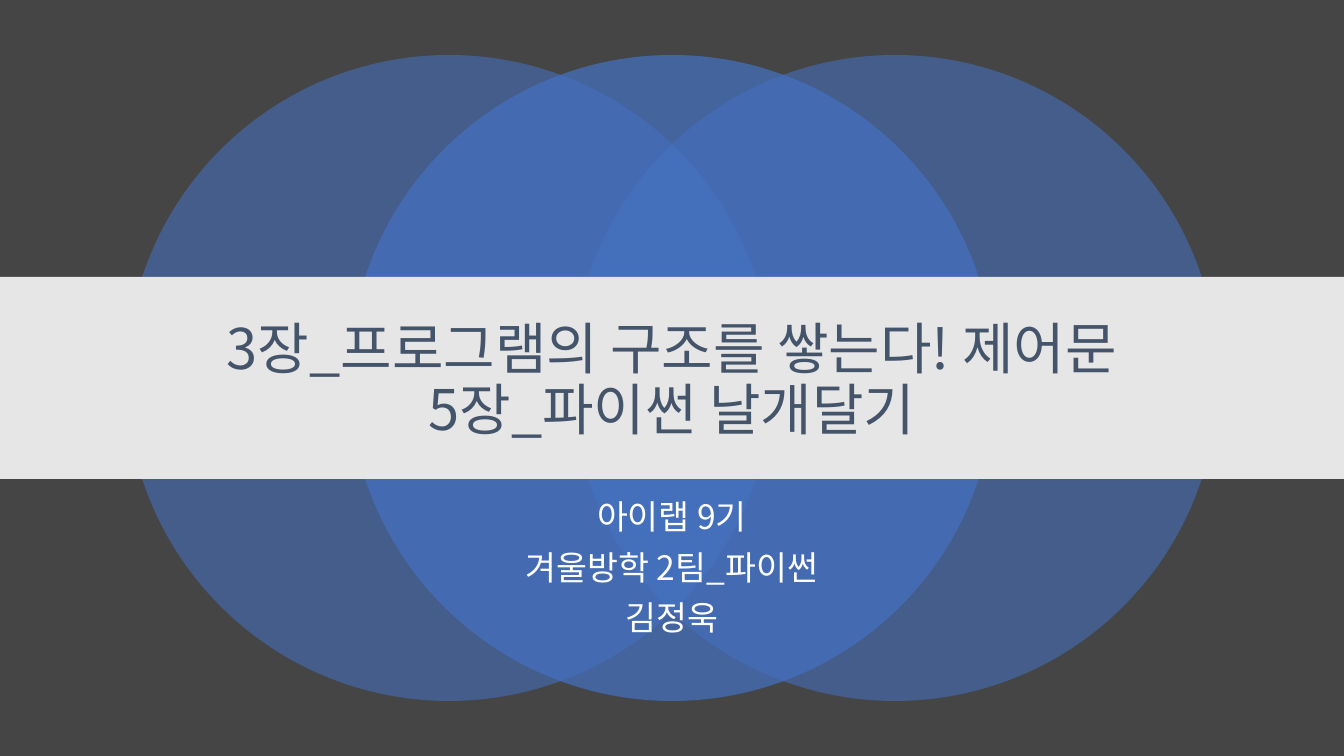
from lxml import etree
from pptx import Presentation
from pptx.dml.color import RGBColor
from pptx.enum.shapes import MSO_SHAPE
from pptx.enum.text import MSO_ANCHOR, PP_ALIGN
from pptx.oxml.ns import qn
from pptx.util import Pt

OVAL, RECTANGLE = MSO_SHAPE.OVAL, MSO_SHAPE.RECTANGLE
TOP, MIDDLE = MSO_ANCHOR.TOP, MSO_ANCHOR.MIDDLE
CENTER = PP_ALIGN.CENTER

# Content: paragraphs, each a list of lines
TITLE = [["3장_프로그램의 구조를 쌓는다! 제어문", "5장_파이썬 날개달기"]]
SUBTITLE = [["아이랩 9기"], ["겨울방학 2팀_파이썬"], ["김정욱"]]

# Circles from back to front: steps from the centre, opacity in percent
CIRCLES = [(-1, 55), (1, 55), (0, 70)]

THEME = {
    "font": "Noto Sans CJK KR",
    "background": "454545",
    "circle": "4472C4",
    "band": "E7E6E6",
    "title": "44546A",
    "subtitle": "FFFFFF",
    "title_size": 40,
    "subtitle_size": 24,
}

# Layout in px
EMU_PER_PX = 914400 / 100.8
WIDTH, HEIGHT = 1344, 756
DIAMETER, CIRCLE_STEP = 646, 223
BAND_TOP, BAND_HEIGHT = 277, 202
TEXT_WIDTH = 1008
TITLE_TOP, TITLE_HEIGHT = 306, 152
SUBTITLE_TOP, SUBTITLE_HEIGHT = 496, 187


def emu(px):
    return round(px * EMU_PER_PX)


def color(name):
    return RGBColor.from_string(THEME[name])


def add_filled(page, kind, left, top, width, height, name, opacity=100):
    shape = page.shapes.add_shape(kind, emu(left), emu(top), emu(width), emu(height))
    shape.shadow.inherit = False
    shape.line.fill.background()
    shape.fill.solid()
    shape.fill.fore_color.rgb = color(name)
    if opacity < 100:
        fill_color = shape.fill._xPr.find(".//" + qn("a:srgbClr"))
        etree.SubElement(fill_color, qn("a:alpha"), val=str(opacity * 1000))


def add_text(page, paragraphs, top, height, name, anchor, space_before):
    left = (WIDTH - TEXT_WIDTH) / 2
    box = page.shapes.add_textbox(emu(left), emu(top), emu(TEXT_WIDTH), emu(height))
    frame = box.text_frame
    frame.word_wrap = True
    frame.vertical_anchor = anchor
    for index, lines in enumerate(paragraphs):
        para = frame.add_paragraph() if index else frame.paragraphs[0]
        para.alignment = CENTER
        para.line_spacing = 0.9
        para.space_before = Pt(space_before)
        for number, line in enumerate(lines):
            if number:
                para.add_line_break()
            span = para.add_run()
            span.text = line
            span.font.size = Pt(THEME[name + "_size"])
            span.font.color.rgb = color(name)
            span.font.name = THEME["font"]
            # East Asian typeface for the Korean letters
            etree.SubElement(span.font._element, qn("a:ea"), typeface=THEME["font"])


def main():
    deck = Presentation()
    deck.slide_width, deck.slide_height = emu(WIDTH), emu(HEIGHT)
    page = deck.slides.add_slide(deck.slide_layouts[6])
    page.background.fill.solid()
    page.background.fill.fore_color.rgb = color("background")

    # Overlapping circles
    for step, opacity in CIRCLES:
        left = (WIDTH - DIAMETER) / 2 + step * CIRCLE_STEP
        top = (HEIGHT - DIAMETER) / 2
        add_filled(page, OVAL, left, top, DIAMETER, DIAMETER, "circle", opacity)

    # Subtitle, then the band with the title
    add_text(page, SUBTITLE, SUBTITLE_TOP, SUBTITLE_HEIGHT, "subtitle", TOP, 10)
    add_filled(page, RECTANGLE, 0, BAND_TOP, WIDTH, BAND_HEIGHT, "band")
    add_text(page, TITLE, TITLE_TOP, TITLE_HEIGHT, "title", MIDDLE, 0)

    deck.save("out.pptx")


if __name__ == "__main__":
    main()
